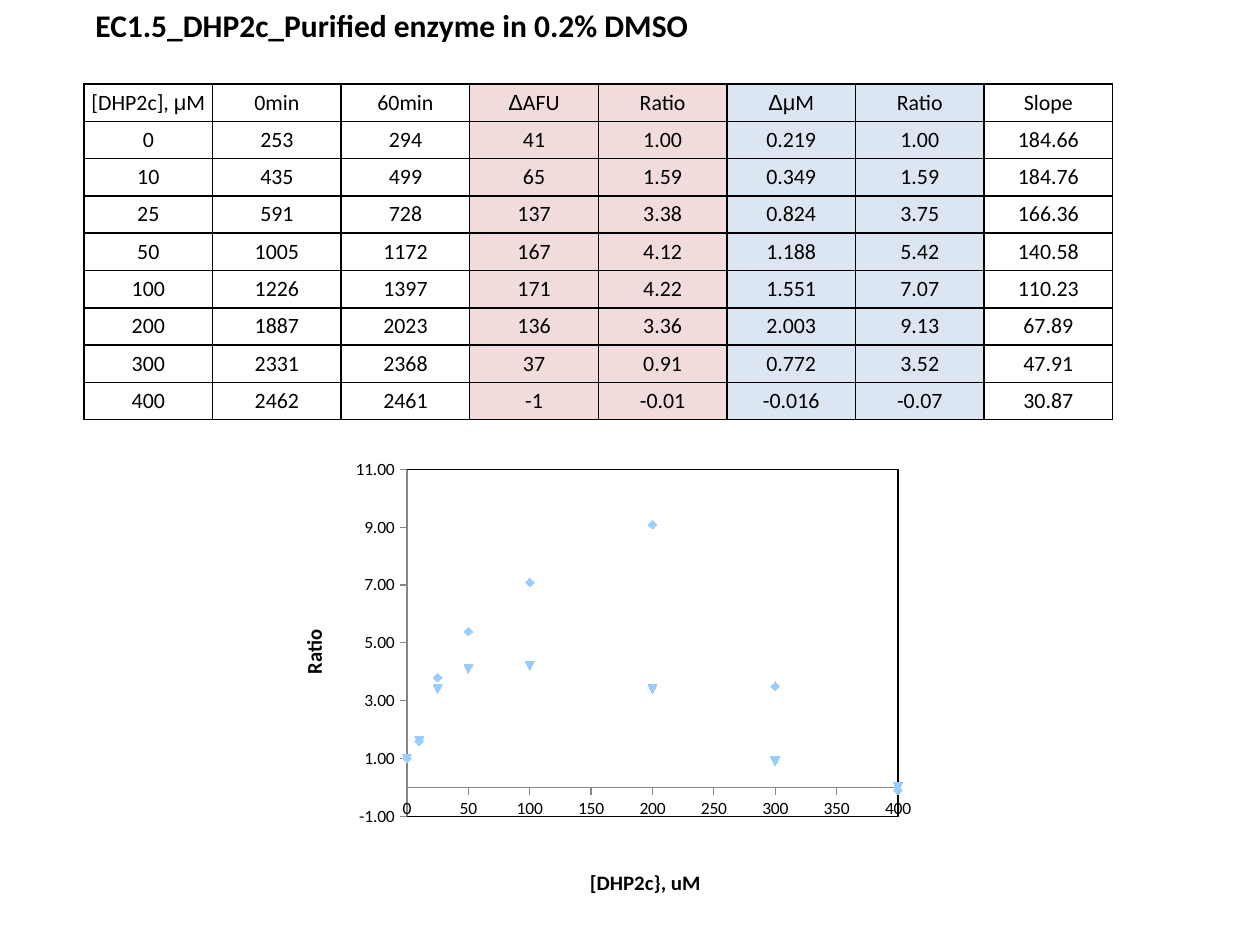
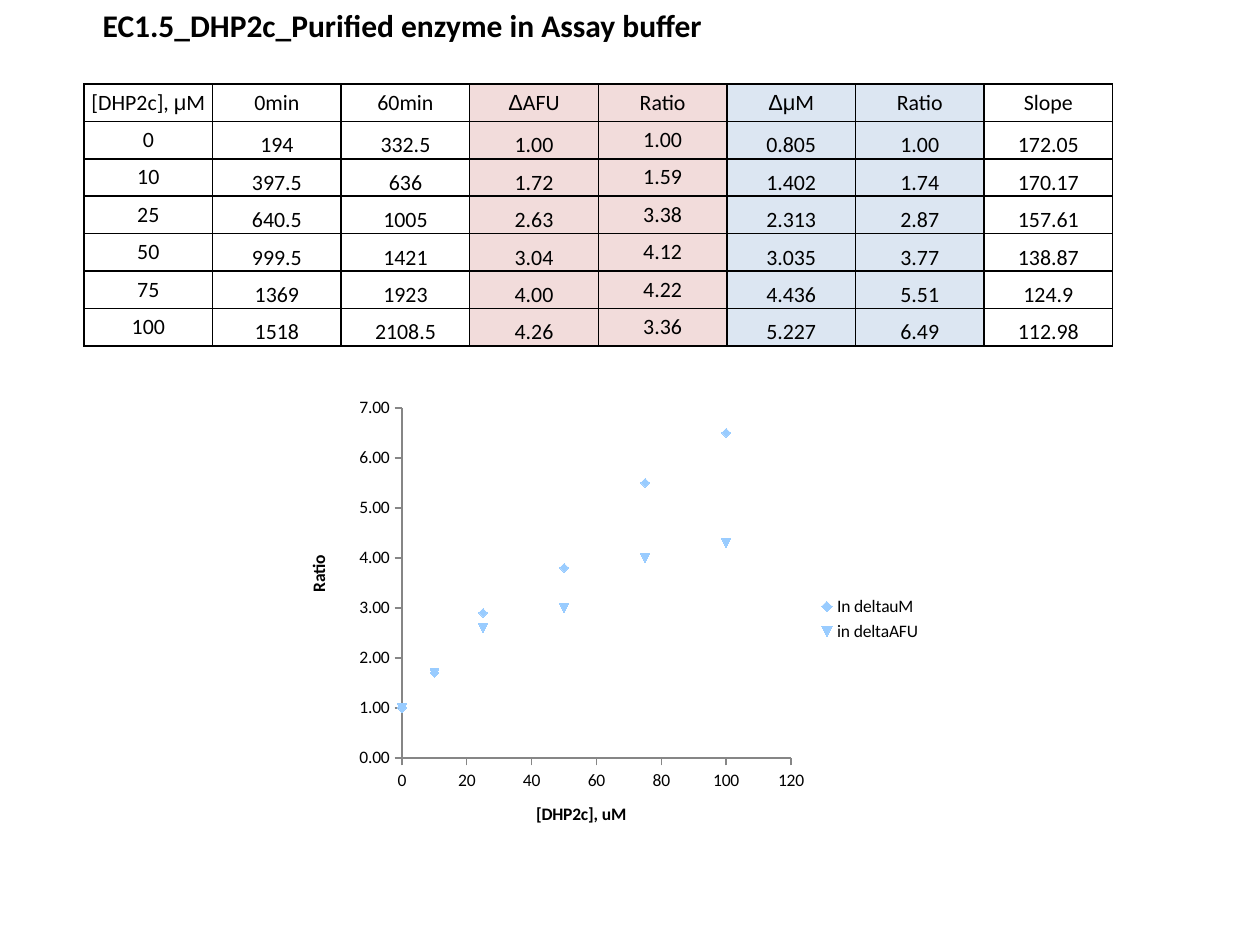
import itertools
from dataclasses import dataclass

import lxml.etree
import pptx
import pptx.chart.data
import pptx.dml.color
import pptx.enum.chart
import pptx.enum.text
import pptx.oxml
import pptx.oxml.ns
import pptx.util

qn = pptx.oxml.ns.qn
PX = 914400 / 126


@dataclass(frozen=True)
class Theme:
    ink: str = "000000"
    paper: str = "FFFFFF"
    fluorescence: str = "F2DCDB"
    concentration: str = "DCE6F2"
    marker: str = "99CCFF"
    axis: str = "868686"
    font: str = "Calibri"
    greek_font: str = "Arial"
    title_size: float = 18
    cell_size: float = 12.5
    chart_size: float = 10
    line_width: float = 1
    axis_width: float = 0.75
    marker_size: int = 5


THEME = Theme()
HEADINGS = ["[DHP2c], μM", "0min", "60min", "ΔAFU", "Ratio", "ΔμM", "Ratio", "Slope"]
COLUMN_FILLS = [THEME.paper] * 3 + [THEME.fluorescence] * 2 + [THEME.concentration] * 2 + [THEME.paper]

DMSO = {
    "title": "EC1.5_DHP2c_Purified enzyme in 0.2% DMSO",
    "title_box": (80, 0, 624, 50),
    "table_box": (84, 84, 1029, 336),
    "rows": [
        "0 253 294 41 1.00 0.219 1.00 184.66",
        "10 435 499 65 1.59 0.349 1.59 184.76",
        "25 591 728 137 3.38 0.824 3.75 166.36",
        "50 1005 1172 167 4.12 1.188 5.42 140.58",
        "100 1226 1397 171 4.22 1.551 7.07 110.23",
        "200 1887 2023 136 3.36 2.003 9.13 67.89",
        "300 2331 2368 37 0.91 0.772 3.52 47.91",
        "400 2462 2461 -1 -0.01 -0.016 -0.07 30.87",
    ],
    "low_columns": (),
    "chart_box": (283, 451, 640, 451),
    "plot_box": (124, 19, 491, 354),
    "framed": True,
    "legend": False,
    "series": {"Series 1": 6, "Series 2": 4},
    "dose_axis": ("[DHP2c}, uM", (303, 423), 0, 400, 50),
    "ratio_axis": ("Ratio", (13, 179), -1, 11, 2),
    "axis_title_size": 12,
}
BUFFER = {
    "title": "EC1.5_DHP2c_Purified enzyme in Assay buffer",
    "title_box": (87, 0, 631, 50),
    "table_box": (84, 84, 1029, 262),
    "rows": [
        "0 194 332.5 1.00 1.00 0.805 1.00 172.05",
        "10 397.5 636 1.72 1.59 1.402 1.74 170.17",
        "25 640.5 1005 2.63 3.38 2.313 2.87 157.61",
        "50 999.5 1421 3.04 4.12 3.035 3.77 138.87",
        "75 1369 1923 4.00 4.22 4.436 5.51 124.9",
        "100 1518 2108.5 4.26 3.36 5.227 6.49 112.98",
    ],
    "low_columns": (1, 2, 3, 5, 6, 7),
    "chart_box": (294, 388, 640, 462),
    "plot_box": (108, 20, 389, 350),
    "framed": False,
    "legend": True,
    "series": {"In deltauM": 6, "in deltaAFU": 3},
    "dose_axis": ("[DHP2c], uM", (239, 411), 0, 120, 20),
    "ratio_axis": ("Ratio", (10, 164), 0, 7, 1),
    "axis_title_size": 10,
}


def emu(*lengths):
    return [pptx.util.Emu(round(length * PX)) for length in lengths]


def rgb(colour):
    return pptx.dml.color.RGBColor.from_string(colour)


def style_font(font, size, bold=False, name=THEME.font):
    font.size = pptx.util.Pt(size)
    font.name = name
    font.bold = bold
    font.color.rgb = rgb(THEME.ink)


def add_line(parent, tag, width):
    line = lxml.etree.SubElement(parent, qn(tag), w=str(pptx.util.Pt(width)))
    fill = lxml.etree.SubElement(line, qn("a:solidFill"))
    lxml.etree.SubElement(fill, qn("a:srgbClr"), val=THEME.ink)


def place_title(slide, assay):
    title = slide.shapes.title
    title.left, title.top, title.width, title.height = emu(*assay["title_box"])
    frame = title.text_frame
    frame.text = assay["title"]
    frame.word_wrap = False
    frame.auto_size = pptx.enum.text.MSO_AUTO_SIZE.SHAPE_TO_FIT_TEXT
    frame.vertical_anchor = pptx.enum.text.MSO_ANCHOR.MIDDLE
    frame.paragraphs[0].alignment = pptx.enum.text.PP_ALIGN.CENTER
    style_font(frame.paragraphs[0].runs[0].font, THEME.title_size, bold=True)


def fill_cell(cell, text, colour, low):
    anchors = pptx.enum.text.MSO_ANCHOR
    cell.margin_left = cell.margin_right = cell.margin_top = cell.margin_bottom = 0
    cell.vertical_anchor = anchors.BOTTOM if low else anchors.MIDDLE
    paragraph = cell.text_frame.paragraphs[0]
    paragraph.alignment = pptx.enum.text.PP_ALIGN.CENTER
    for is_greek, letters in itertools.groupby(text, lambda letter: letter in "Δμ"):
        run = paragraph.add_run()
        run.text = "".join(letters)
        style_font(run.font, THEME.cell_size, name=THEME.greek_font if is_greek else THEME.font)
    for side in "LRTB":
        add_line(cell._tc.get_or_add_tcPr(), f"a:ln{side}", THEME.line_width)
    cell.fill.solid()
    cell.fill.fore_color.rgb = rgb(colour)


def place_readings(slide, assay):
    rows = [HEADINGS] + [row.split() for row in assay["rows"]]
    frame = slide.shapes.add_table(len(rows), len(HEADINGS), *emu(*assay["table_box"]))
    readings = frame.table
    readings.first_row = readings.horz_banding = False
    for row_index, row in enumerate(rows):
        for column, text in enumerate(row):
            low = row_index > 0 and column in assay["low_columns"]
            fill_cell(readings.cell(row_index, column), text, COLUMN_FILLS[column], low)


def set_layout(parent, position, chart_box, **lengths):
    layout = parent.find(qn("c:layout"))
    if layout is None:
        layout = pptx.oxml.parse_xml(f"<c:layout {pptx.oxml.ns.nsdecls('c')}/>")
        parent.insert(position, layout)
    manual = lxml.etree.SubElement(layout, qn("c:manualLayout"))
    if "w" in lengths:
        lxml.etree.SubElement(manual, qn("c:layoutTarget"), val="inner")
    for key in "xy":
        lxml.etree.SubElement(manual, qn(f"c:{key}Mode"), val="edge")
    sides = {"x": chart_box[2], "y": chart_box[3], "w": chart_box[2], "h": chart_box[3]}
    for key, length in lengths.items():
        lxml.etree.SubElement(manual, qn(f"c:{key}"), val=f"{length / sides[key]:.4f}")


def style_axis(axis, settings, number_format, assay, rotation):
    caption, (left, top), low, high, step = settings
    axis.minimum_scale, axis.maximum_scale, axis.major_unit = low, high, step
    axis.has_major_gridlines = axis.has_minor_gridlines = False
    axis.major_tick_mark = pptx.enum.chart.XL_TICK_MARK.OUTSIDE
    axis.minor_tick_mark = pptx.enum.chart.XL_TICK_MARK.NONE
    axis.tick_labels.number_format = number_format
    axis.tick_labels.number_format_is_linked = False
    style_font(axis.tick_labels.font, THEME.chart_size)
    axis.format.line.color.rgb = rgb(THEME.axis)
    axis.format.line.width = pptx.util.Pt(THEME.axis_width)
    frame = axis.axis_title.text_frame
    frame.text = caption
    style_font(frame.paragraphs[0].runs[0].font, assay["axis_title_size"], bold=True)
    title = axis._element.find(qn("c:title"))
    body = next(title.iter(qn("a:bodyPr")))
    body.set("rot", str(rotation))
    body.set("vert", "horz")
    set_layout(title, 1, assay["chart_box"], x=left, y=top)


def place_ratio_chart(slide, assay):
    rows = [row.split() for row in assay["rows"]]
    data = pptx.chart.data.XyChartData()
    for name, column in assay["series"].items():
        ratios = data.add_series(name)
        for row in rows:
            ratios.add_data_point(int(row[0]), round(float(row[column]), 1))
    frame = slide.shapes.add_chart(
        pptx.enum.chart.XL_CHART_TYPE.XY_SCATTER, *emu(*assay["chart_box"]), data)
    chart = frame.chart
    style_font(chart.font, THEME.chart_size)
    chart.has_title = False
    chart.has_legend = assay["legend"]
    if assay["legend"]:
        chart.legend.position = pptx.enum.chart.XL_LEGEND_POSITION.RIGHT
        chart.legend.include_in_layout = False
        style_font(chart.legend.font, THEME.chart_size)

    plot = chart.plots[0]
    plot.vary_by_categories = False
    markers = pptx.enum.chart.XL_MARKER_STYLE
    for ratios, marker in zip(plot.series, (markers.DIAMOND, markers.AUTOMATIC)):
        ratios.format.line.fill.background()
        ratios.marker.style = marker
        ratios.marker.size = THEME.marker_size
        ratios.marker.format.fill.solid()
        ratios.marker.format.fill.fore_color.rgb = rgb(THEME.marker)
        ratios.marker.format.line.color.rgb = rgb(THEME.marker)

    style_axis(chart.category_axis, assay["dose_axis"], "General", assay, 0)
    style_axis(chart.value_axis, assay["ratio_axis"], "0.00", assay, -5400000)
    plot_area = chart._chartSpace.chart.plotArea
    set_layout(plot_area, 0, assay["chart_box"], **dict(zip("xywh", assay["plot_box"])))
    if assay["framed"]:
        properties = lxml.etree.SubElement(plot_area, qn("c:spPr"))
        lxml.etree.SubElement(properties, qn("a:noFill"))
        add_line(properties, "a:ln", THEME.axis_width)


def add_assay_slide(deck, assay):
    slide = deck.slides.add_slide(deck.slide_layouts.get_by_name("Title Only"))
    place_title(slide, assay)
    place_readings(slide, assay)
    place_ratio_chart(slide, assay)


def main():
    deck = pptx.Presentation()
    deck.slide_width, deck.slide_height = emu(1260, 945)
    for assay in (DMSO, BUFFER):
        add_assay_slide(deck, assay)
    deck.save("out.pptx")


if __name__ == "__main__":
    main()
